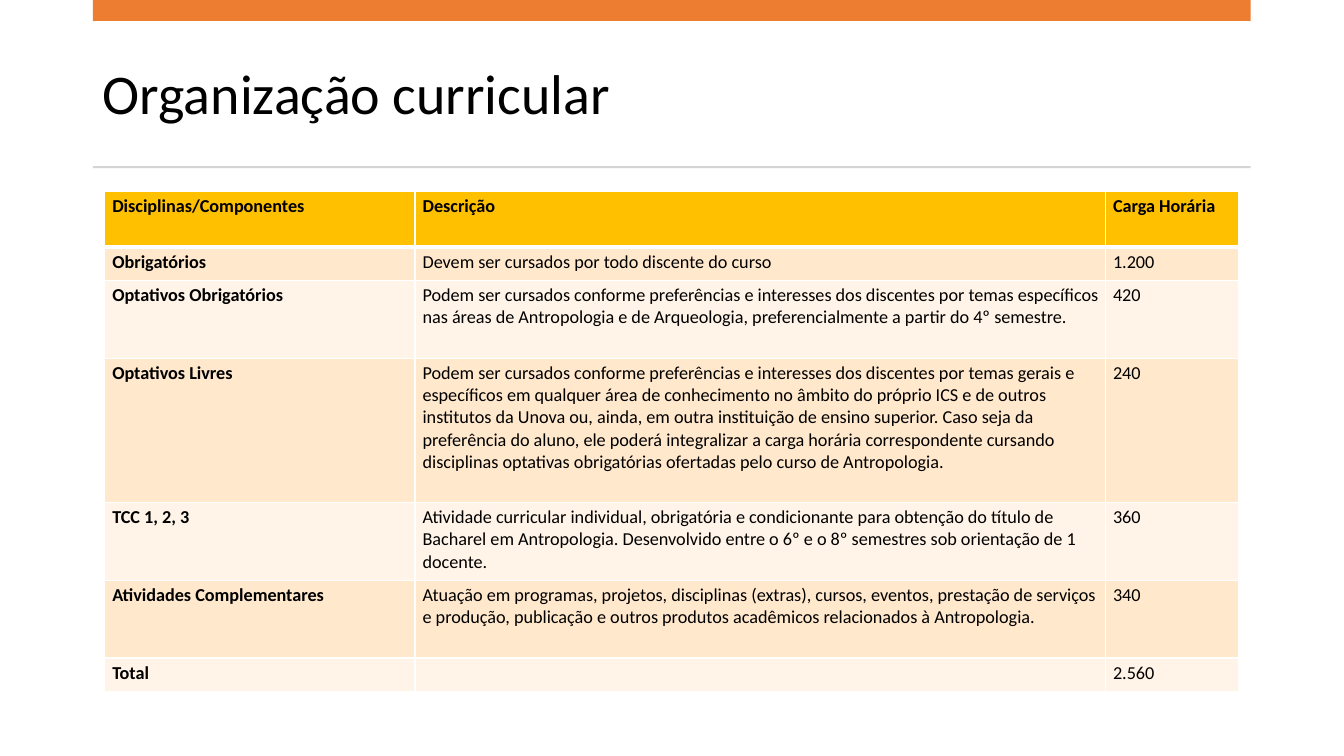
from dataclasses import dataclass

from lxml.etree import SubElement
from pptx import Presentation
from pptx.dml.color import RGBColor as Color
from pptx.enum.shapes import MSO_SHAPE as Preset
from pptx.enum.text import MSO_ANCHOR as Anchor, PP_ALIGN as Align
from pptx.oxml.ns import qn
from pptx.util import Cm, Pt


@dataclass(frozen=True)
class Theme:
    font: str = "Calibri"
    title_size: int = 40
    table_size: int = 13
    text: str = "000000"
    accent: str = "ED7D31"
    rule: str = "D5D5D5"
    header: str = "FFC000"
    bands: tuple = ("FFE8CC", "FFF4E7")
    border: str = "FFFFFF"
    thin: int = 1
    thick: int = 3


THEME = Theme()

COLUMN_WIDTHS = (7.82, 17.4, 3.35)
ROW_HEIGHTS = (1.4, 0.84, 1.96, 3.63, 1.96, 1.96, 0.84)
CURRICULUM = (
    ("Disciplinas/Componentes", "Descrição", "Carga Horária"),
    ("Obrigatórios", "Devem ser cursados por todo discente do curso", "1.200"),
    ("Optativos Obrigatórios",
     "Podem ser cursados conforme preferências e interesses dos discentes por temas "
     "específicos nas áreas de Antropologia e de Arqueologia, preferencialmente a "
     "partir do 4º semestre.", "420"),
    ("Optativos Livres",
     "Podem ser cursados conforme preferências e interesses dos discentes por temas "
     "gerais e específicos em qualquer área de conhecimento no âmbito do próprio ICS e "
     "de outros institutos da Unova ou, ainda, em outra instituição de ensino superior. "
     "Caso seja da preferência do aluno, ele poderá integralizar a carga horária "
     "correspondente cursando disciplinas optativas obrigatórias ofertadas pelo curso "
     "de Antropologia.", "240"),
    ("TCC 1, 2, 3",
     "Atividade curricular individual, obrigatória e condicionante para obtenção do "
     "título de Bacharel em Antropologia. Desenvolvido entre o 6º e o 8º semestres sob "
     "orientação de 1 docente.", "360"),
    ("Atividades Complementares",
     "Atuação em programas, projetos, disciplinas (extras), cursos, eventos, prestação "
     "de serviços e produção, publicação e outros produtos acadêmicos relacionados à "
     "Antropologia.", "340"),
    ("Total", "", "2.560"),
)


def set_format(target, values):
    for name, value in values.items():
        setattr(target, name, value)


def write(para, text, size, bold=False):
    if not text:
        # An empty cell keeps the table's text size, so its row stays low
        SubElement(para._p, qn("a:endParaRPr"), sz=str(size * 100))
        return
    span = para.add_run()
    span.text = text
    set_format(span.font, {"name": THEME.font, "size": Pt(size), "bold": bold})
    span.font.color.rgb = Color.from_string(THEME.text)


def add_bar(page, box, color):
    bar = page.shapes.add_shape(Preset.RECTANGLE, *map(Cm, box))
    bar.shadow.inherit = False
    bar.fill.solid()
    bar.fill.fore_color.rgb = Color.from_string(color)
    bar.line.fill.background()


def add_heading(page, box, text):
    """Title with a bar at the page's top edge and a rule below."""
    left, top, width, height = box
    title = page.shapes.title
    set_format(title, dict(zip(("left", "top", "width", "height"), map(Cm, box))))
    set_format(title.text_frame, {"vertical_anchor": Anchor.MIDDLE, "word_wrap": True})
    para = title.text_frame.paragraphs[0]
    set_format(para, {"alignment": Align.LEFT, "line_spacing": 0.9})
    write(para, text, THEME.title_size)

    add_bar(page, (left, 0, width, 0.53), THEME.accent)
    add_bar(page, (left, top + height + 0.25, width, 0.05), THEME.rule)


def add_borders(cell, widths):
    for side, width in widths.items():
        line = SubElement(cell._tc.get_or_add_tcPr(), qn(f"a:ln{side}"), w=str(Pt(width)))
        fill = SubElement(line, qn("a:solidFill"))
        SubElement(fill, qn("a:srgbClr"), val=THEME.border)


def format_cell(cell, text, row, column):
    thin, thick = THEME.thin, THEME.thick
    add_borders(cell, {"L": thin, "R": thin,
                       "T": thick if row == 1 else thin,
                       "B": thick if row == 0 else thin})
    cell.fill.solid()
    color = THEME.bands[(row - 1) % 2] if row else THEME.header
    cell.fill.fore_color.rgb = Color.from_string(color)
    set_format(cell, {"margin_left": Cm(0.19), "margin_right": Cm(0.19),
                      "margin_top": Cm(0.1), "margin_bottom": Cm(0.1),
                      "vertical_anchor": Anchor.TOP})
    write(cell.text_frame.paragraphs[0], text, THEME.table_size,
          bold=row == 0 or column == 0)


def add_curriculum(page, box):
    frame = page.shapes.add_table(len(CURRICULUM), len(COLUMN_WIDTHS), *map(Cm, box))
    table = frame.table
    for column, width in zip(table.columns, COLUMN_WIDTHS):
        column.width = Cm(width)
    for row, height in zip(table.rows, ROW_HEIGHTS):
        row.height = Cm(height)
    for row, texts in enumerate(CURRICULUM):
        for column, text in enumerate(texts):
            format_cell(table.cell(row, column), text, row, column)


def main():
    deck = Presentation()
    set_format(deck, {"slide_width": Cm(33.87), "slide_height": Cm(19.05)})
    page = deck.slides.add_slide(deck.slide_layouts.get_by_name("Title Only"))
    add_heading(page, (2.34, 0.94, 29.18, 3), "Organização curricular")
    add_curriculum(page, (2.64, 4.83, sum(COLUMN_WIDTHS), sum(ROW_HEIGHTS)))
    deck.save("out.pptx")


if __name__ == "__main__":
    main()
